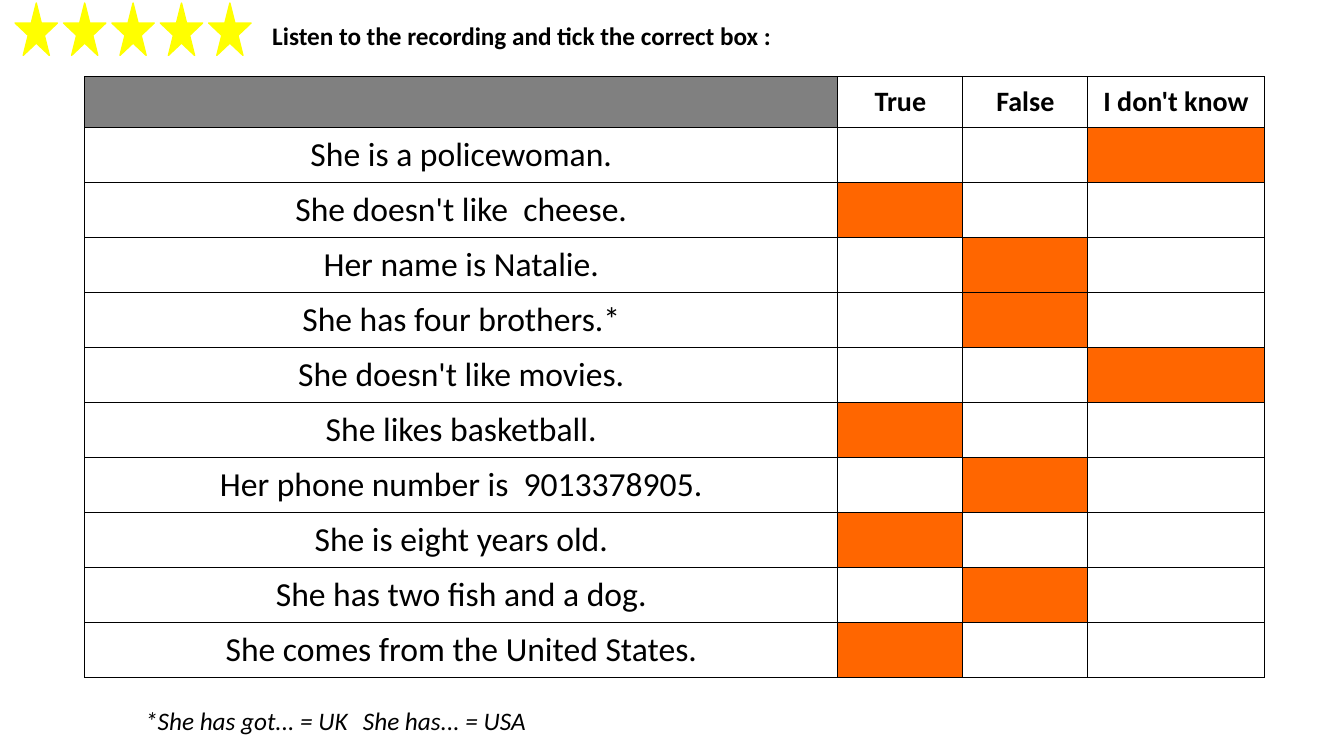
from dataclasses import dataclass

from lxml import etree
from pptx import Presentation
from pptx.dml.color import RGBColor
from pptx.enum.shapes import MSO_SHAPE
from pptx.enum.text import MSO_ANCHOR, PP_ALIGN
from pptx.oxml import parse_xml
from pptx.oxml.ns import nsdecls, qn
from pptx.util import Inches, Pt

STAR = MSO_SHAPE.STAR_5_POINT
MIDDLE = MSO_ANCHOR.MIDDLE
LEFT, CENTER = PP_ALIGN.LEFT, PP_ALIGN.CENTER

COLORS = {
    "ink": "000000",
    "paper": "FFFFFF",
    "blank": "808080",
    "tick": "FF6600",
    "star": "FFFF00",
}
TITLE_FONT = {"size": Pt(18), "bold": True}
HEAD_FONT = {"size": Pt(20), "bold": True}
CLAIM_FONT = {"size": Pt(24), "bold": False}
NOTE_FONT = {"size": Pt(18), "italic": True}

HEADS = ["", "True", "False", "I don't know"]
WIDTHS = [7.47, 1.24, 1.24, 1.75]
TABLE_TOP, TABLE_HIGH, HEAD_HIGH = 0.76, 5.96, 0.5
STARS, STAR_STEP = 5, 0.48
CELL_PADS = {"margin_left": 0.01, "margin_right": 0.01,
             "margin_top": 0.01, "margin_bottom": 0}


@dataclass
class Claim:
    text: str
    answer: str


@dataclass
class Label:
    text: str
    box: tuple
    indent: float
    font: dict


CLAIMS = [
    Claim("She is a policewoman.", "I don't know"),
    Claim("She doesn't like  cheese.", "True"),
    Claim("Her name is Natalie.", "False"),
    Claim("She has four brothers.*", "False"),
    Claim("She doesn't like movies.", "I don't know"),
    Claim("She likes basketball.", "True"),
    Claim("Her phone number is  9013378905.", "False"),
    Claim("She is eight years old.", "True"),
    Claim("She has two fish and a dog.", "False"),
    Claim("She comes from the United States.", "True"),
]
TITLE = Label("Listen to the recording and tick the correct box :",
              (2.26, 0.15, 5.6, 0.4), 0.44, TITLE_FONT)
NOTE = Label("*She has got... = UK\tShe has... = USA",
             (1.3, 6.95, 4.1, 0.4), 0.14, NOTE_FONT)
NOTE_TAB = 2.16


def color(name: str) -> RGBColor:
    return RGBColor.from_string(COLORS[name])


def write(para, text: str, font: dict, align) -> None:
    para.alignment = align
    run = para.add_run()
    run.text = text
    run.font.name = "Calibri"
    run.font.color.rgb = color("ink")
    for key, value in font.items():
        setattr(run.font, key, value)


def add_label(slide, label: Label):
    frame = slide.shapes.add_textbox(*map(Inches, label.box)).text_frame
    frame.word_wrap = True
    frame.margin_left = Inches(label.indent)
    para = frame.paragraphs[0]
    write(para, label.text, label.font, LEFT)
    return para


def add_tab(para, place: float) -> None:
    stops = etree.SubElement(para._p.get_or_add_pPr(), qn("a:tabLst"))
    etree.SubElement(stops, qn("a:tab"), pos=str(Inches(place)), algn="l")


def style_cell(cell, fill: str) -> None:
    """Give a cell its border, fill and margins."""
    props = cell._tc.get_or_add_tcPr()
    for side in "LRTB":
        props.append(parse_xml(
            f'<a:ln{side} {nsdecls("a")} w="{Pt(0.75)}"><a:solidFill>'
            f'<a:srgbClr val="{COLORS["ink"]}"/></a:solidFill></a:ln{side}>'))
    cell.fill.solid()
    cell.fill.fore_color.rgb = color(fill)
    cell.vertical_anchor = MIDDLE
    for key, value in CELL_PADS.items():
        setattr(cell, key, Inches(value))


def add_quiz(slide) -> None:
    box = (0.84, TABLE_TOP, sum(WIDTHS), TABLE_HIGH)
    table = slide.shapes.add_table(
        len(CLAIMS) + 1, len(HEADS), *map(Inches, box)).table
    table.first_row = table.horz_banding = False
    for column, width in zip(table.columns, WIDTHS):
        column.width = Inches(width)
    for row in table.rows:
        row.height = Inches((TABLE_HIGH - HEAD_HIGH) / len(CLAIMS))
    table.rows[0].height = Inches(HEAD_HIGH)

    for col, head in enumerate(HEADS):
        cell = table.cell(0, col)
        style_cell(cell, "paper" if head else "blank")
        if head:
            write(cell.text_frame.paragraphs[0], head, HEAD_FONT, CENTER)
        for row, claim in enumerate(CLAIMS, 1):
            cell = table.cell(row, col)
            style_cell(cell, "tick" if claim.answer == head else "paper")
            if col == 0:
                write(cell.text_frame.paragraphs[0], claim.text,
                      CLAIM_FONT, CENTER)


def add_stars(slide) -> None:
    for place in range(STARS):
        box = (0.15 + place * STAR_STEP, 0.03, 0.42, 0.52)
        star = slide.shapes.add_shape(STAR, *map(Inches, box))
        star.shadow.inherit = False
        star.fill.solid()
        star.fill.fore_color.rgb = color("star")
        star.line.color.rgb = color("star")
        star.line.width = Pt(1)


def main() -> None:
    deck = Presentation()
    deck.slide_width, deck.slide_height = Inches(13.33), Inches(7.5)
    slide = deck.slides.add_slide(deck.slide_layouts[6])
    add_label(slide, TITLE)
    add_quiz(slide)
    add_tab(add_label(slide, NOTE), NOTE_TAB)
    add_stars(slide)
    deck.save("out.pptx")


if __name__ == "__main__":
    main()
